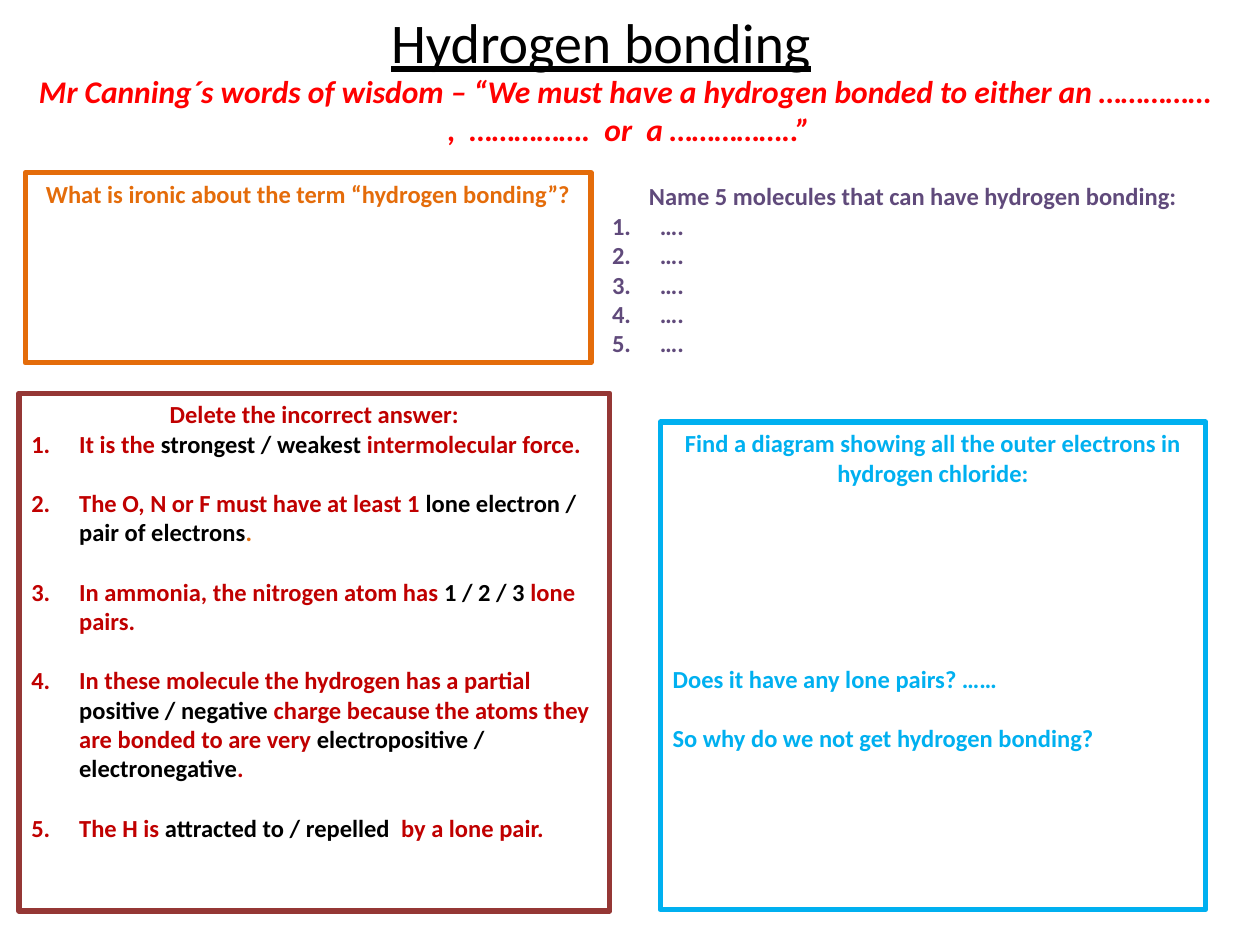
from pptx import Presentation
from pptx.dml.color import RGBColor as Rgb
from pptx.enum.shapes import MSO_SHAPE as Kind
from pptx.enum.text import MSO_ANCHOR as Anchor, MSO_AUTO_SIZE as Fit, PP_ALIGN as Align
from pptx.oxml.ns import qn
from pptx.util import Inches, Pt
from lxml.etree import SubElement

THEME = {
    "font": "Calibri", "title": 32, "quote": 18, "body": 14, "edge": 3,
    "black": "000000", "red": "FF0000", "orange": "E46C0A", "blue": "00B0F0",
    "purple": "604A7B", "wine": "953735", "crimson": "C00000",
}


def add_box(place, edge=None):
    spot = [Inches(n) for n in place]
    if edge:
        box = slide.shapes.add_shape(Kind.RECTANGLE, *spot)
        box.shadow.inherit = False
        box.fill.background()
        box.line.color.rgb = Rgb.from_string(THEME[edge])
        box.line.width = Pt(THEME["edge"])
    else:
        box = slide.shapes.add_textbox(*spot)
    frame = box.text_frame
    frame.word_wrap = True
    frame.auto_size = Fit.NONE
    frame.vertical_anchor = Anchor.TOP
    return frame


def add_line(frame, parts, tone, size="body", align=Align.CENTER, gap=0, listed=False):
    first = frame.paragraphs[0]
    para = first if not first.runs else frame.add_paragraph()
    para.alignment = align
    para.space_before = Pt(gap)
    if listed:
        props = para._p.get_or_add_pPr()
        props.set("marL", str(Inches(0.38)))
        props.set("indent", str(-Inches(0.38)))
        SubElement(props, qn("a:buFont"), typeface="+mj-lt")
        SubElement(props, qn("a:buAutoNum"), type="arabicPeriod")
    font = para.font
    font.name = THEME["font"]
    font.size = Pt(THEME[size])
    font.bold = True
    font.color.rgb = Rgb.from_string(THEME[tone])
    for part in parts:
        text, hue = part if isinstance(part, tuple) else (part, tone)
        run = para.add_run()
        run.text = text
        if hue != tone:
            run.font.color.rgb = Rgb.from_string(THEME[hue])
    return para


deck = Presentation()
deck.slide_width, deck.slide_height = Inches(10), Inches(7.5)
slide = deck.slides.add_slide(deck.slide_layouts[5])

title = slide.shapes.title
title.left, title.top = Inches(0.52), Inches(-0.03)
title.width, title.height = Inches(8.5), Inches(0.71)
title.text_frame.text = "Hydrogen bonding"
title.text_frame.vertical_anchor = Anchor.MIDDLE
head = title.text_frame.paragraphs[0]
head.alignment = Align.CENTER
head.font.name = THEME["font"]
head.font.size = Pt(THEME["title"])
head.font.underline = True
head.font.color.rgb = Rgb.from_string(THEME["black"])

irony = add_box((0.2, 1.37, 4.49, 1.51), "orange")
add_line(irony, ["What is ironic about the term “hydrogen bonding”?"], "orange")

wisdom = add_box((0.2, 0.52, 9.53, 0.71))
quote = add_line(wisdom, [
    "Mr Canning´s words of wisdom – “We must have a hydrogen bonded to either an "
    "……………  ,  …………….  or  a ……………..”"], "red", "quote")
quote.font.italic = True

diagram = add_box((5.24, 3.35, 4.33, 3.87), "blue")
add_line(diagram, ["Find a diagram showing all the outer electrons in hydrogen chloride:"], "blue")
for text, gap in (("Does it have any lone pairs? ……", 101),
                  ("So why do we not get hydrogen bonding?", 17)):
    add_line(diagram, [text], "blue", align=Align.LEFT, gap=gap)

names = add_box((4.76, 1.39, 4.97, 1.51))
add_line(names, ["Name 5 molecules that can have hydrogen bonding:"], "purple")
for _ in range(5):
    add_line(names, ["…."], "purple", align=Align.LEFT, listed=True)

quiz = add_box((0.15, 3.12, 4.69, 4.11), "wine")
add_line(quiz, ["Delete the incorrect answer:"], "crimson")
items = [
    ["It is the ", ("strongest / weakest ", "black"), "intermolecular force."],
    ["The O, N or F must have at least 1 ",
     ("lone electron / pair of electrons", "black"), (".", "orange")],
    ["In ammonia, the nitrogen atom has ", ("1 / 2 / 3 ", "black"), "lone pairs."],
    ["In these molecule the hydrogen has a partial ", ("positive / negative ", "black"),
     "charge because the atoms they are bonded to are very ",
     ("electropositive / electronegative", "black"), "."],
    ["The H is ", ("attracted to / repelled  ", "black"), "by a lone pair."],
]
for i, parts in enumerate(items):
    add_line(quiz, parts, "crimson", align=Align.LEFT, gap=17 if i else 0, listed=True)

deck.save("out.pptx")
